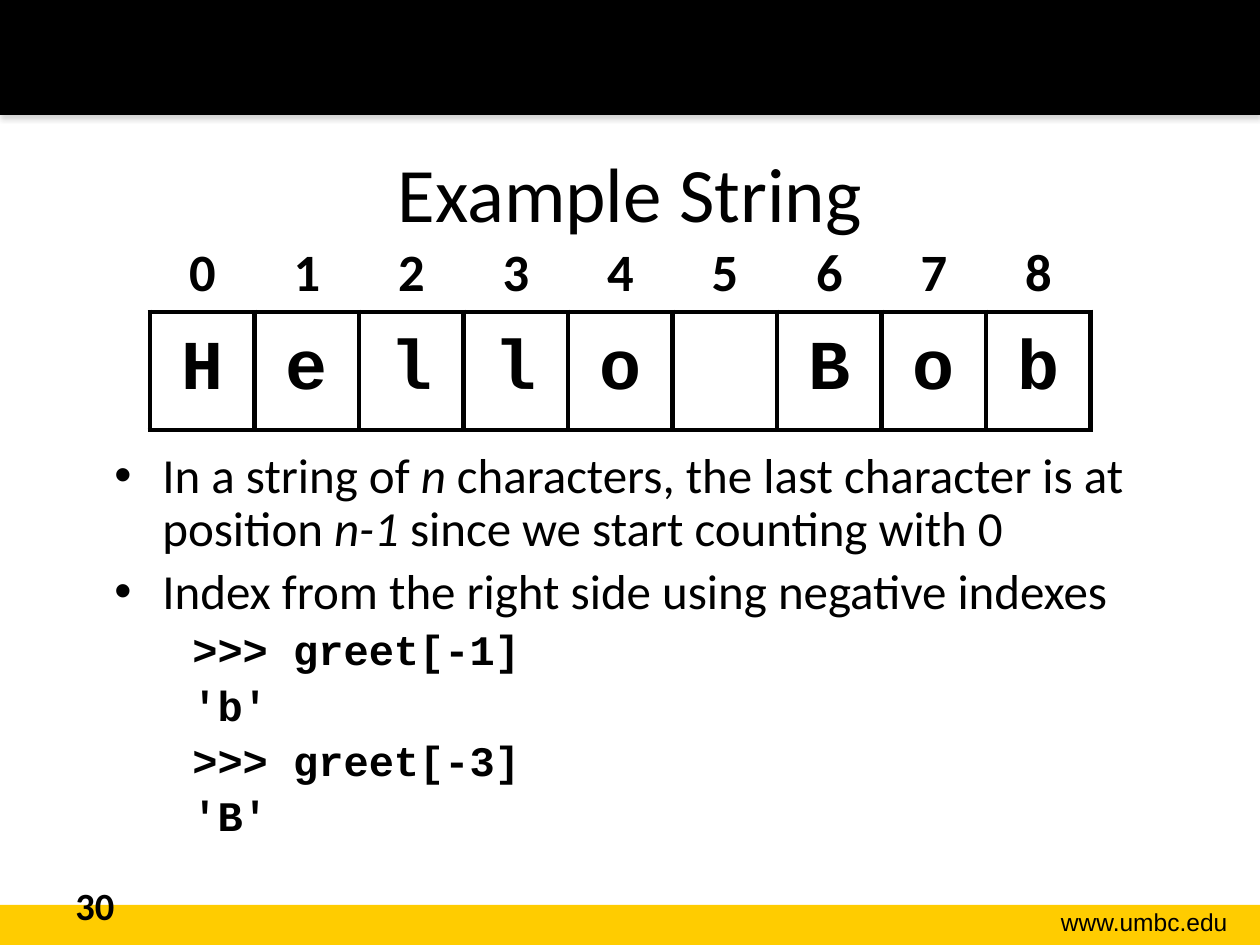
import pptx
import pptx.util
import pptx.dml.color
import pptx.enum.shapes
import pptx.enum.text
import pptx.oxml
import pptx.oxml.ns
from lxml import etree

PX = 914400 // 126
BLACK = pptx.dml.color.RGBColor(0x00, 0x00, 0x00)
WHITE = pptx.dml.color.RGBColor(0xFF, 0xFF, 0xFF)
GOLD = pptx.dml.color.RGBColor(0xFF, 0xCC, 0x00)
ALIGN = pptx.enum.text.PP_ALIGN
ANCHOR = pptx.enum.text.MSO_ANCHOR
qn = pptx.oxml.ns.qn

# Content
TITLE = "Example String"
PAGE_NUMBER = "30"
ADDRESS = "www.umbc.edu"
LETTERS = ["H", "e", "l", "l", "o", "", "B", "o", "b"]
# Odd pieces of a bullet are italic
BULLETS = [
    ["In a string of ", "n", " characters, the last character is at position ",
     "n-1", " since we start counting with 0"],
    ["Index from the right side using negative indexes"],
]
CODE = [">>> greet[-1]", "'b'", ">>> greet[-3]", "'B'"]

BAR_HEIGHT, BANNER_HEIGHT = 40, 115
SLIDE_WIDTH, SLIDE_HEIGHT = 1260, 945
TABLE_LEFT, TABLE_TOP, TABLE_WIDTH = 150, 229, 941
ROW_HEIGHTS = [83, 118]
HANGING = 48


def lengths(*values):
    return [pptx.util.Emu(value * PX) for value in values]


def write(para, text, size, font="Calibri", bold=False, italic=False, align=ALIGN.LEFT):
    para.alignment = align
    span = para.add_run()
    span.text = text
    span.font.size = pptx.util.Pt(size)
    span.font.name = font
    span.font.bold = bold
    span.font.italic = italic
    span.font.color.rgb = BLACK


def add_box(page, place, anchor=ANCHOR.TOP):
    frame = page.shapes.add_textbox(*lengths(*place)).text_frame
    frame.word_wrap = True
    frame.vertical_anchor = anchor
    return frame


def add_bar(page, place, color):
    bar = page.shapes.add_shape(pptx.enum.shapes.MSO_SHAPE.RECTANGLE, *lengths(*place))
    bar.shadow.inherit = False
    bar.fill.solid()
    bar.fill.fore_color.rgb = color
    bar.line.fill.background()
    return bar


def add_shadow(shape):
    effects = shape._element.spPr.find(qn("a:effectLst"))
    shadow = etree.SubElement(effects, qn("a:outerShdw"), blurRad="39370",
                              dist="22860", dir="5400000", rotWithShape="0")
    color = etree.SubElement(shadow, qn("a:srgbClr"), val="808080")
    etree.SubElement(color, qn("a:alpha"), val="35000")


def set_borders(cell, visible):
    properties = cell._tc.get_or_add_tcPr()
    for index, side in enumerate(("L", "R", "T", "B")):
        line = etree.Element(qn("a:ln" + side), w=str(pptx.util.Pt(3)))
        if side in visible:
            fill = etree.SubElement(line, qn("a:solidFill"))
            etree.SubElement(fill, qn("a:srgbClr"), val=str(BLACK))
        else:
            etree.SubElement(line, qn("a:noFill"))
        properties.insert(index, line)


def next_para(frame, number, margin, bullet):
    para = frame.paragraphs[0] if number == 0 else frame.add_paragraph()
    properties = para._p.get_or_add_pPr()
    properties.set("marL", str(margin * PX))
    properties.set("indent", str(-HANGING * PX))
    if bullet:
        etree.SubElement(properties, qn("a:buFont"), typeface="Arial")
        etree.SubElement(properties, qn("a:buChar"), char="•")
    else:
        etree.SubElement(properties, qn("a:buNone"))
    para.line_spacing = 0.9
    para.space_before = pptx.util.Pt(5.6 if number else 0)
    return para


def add_letter_table(page):
    height = sum(ROW_HEIGHTS)
    table = page.shapes.add_table(2, len(LETTERS), *lengths(
        TABLE_LEFT, TABLE_TOP, TABLE_WIDTH, height)).table
    table.first_row = table.horz_banding = False
    for row, row_height in zip(table.rows, lengths(*ROW_HEIGHTS)):
        row.height = row_height
    for number, letter in enumerate(LETTERS):
        table.columns[number].width = pptx.util.Emu(TABLE_WIDTH * PX // len(LETTERS))
        # Index above
        index_cell = table.cell(0, number)
        index_cell.vertical_anchor = ANCHOR.BOTTOM
        index_cell.fill.background()
        set_borders(index_cell, "B")
        write(index_cell.text_frame.paragraphs[0], str(number), 30,
              bold=True, align=ALIGN.CENTER)
        # Character below
        letter_cell = table.cell(1, number)
        letter_cell.vertical_anchor = ANCHOR.MIDDLE
        letter_cell.fill.solid()
        letter_cell.fill.fore_color.rgb = WHITE
        set_borders(letter_cell, "LRTB")
        if letter:
            write(letter_cell.text_frame.paragraphs[0], letter, 40,
                  font="Courier New", bold=True, align=ALIGN.CENTER)


def main():
    deck = pptx.Presentation()
    deck.slide_width, deck.slide_height = lengths(SLIDE_WIDTH, SLIDE_HEIGHT)
    page = deck.slides.add_slide(deck.slide_layouts[6])

    # Footer bar and top banner
    add_bar(page, (0, SLIDE_HEIGHT - BAR_HEIGHT, SLIDE_WIDTH, BAR_HEIGHT), GOLD)
    add_shadow(add_bar(page, (0, 0, SLIDE_WIDTH, BANNER_HEIGHT), BLACK))
    address = add_box(page, (989, 901, 251, 43))
    write(address.paragraphs[0], ADDRESS, 14, font="Arial", align=ALIGN.RIGHT)

    # Title and page number
    title = add_box(page, (63, 113, 1134, 158), ANCHOR.MIDDLE)
    write(title.paragraphs[0], TITLE, 44, align=ALIGN.CENTER)
    number_box = add_box(page, (63, 876, 294, 50))
    write(number_box.paragraphs[0], PAGE_NUMBER, 22, bold=True)

    add_letter_table(page)

    # Bullets and code
    body = add_box(page, (102, 445, 1071, 383))
    for number, pieces in enumerate(BULLETS):
        para = next_para(body, number, HANGING, bullet=True)
        for position, piece in enumerate(pieces):
            write(para, piece, 28, italic=position % 2 == 1)
    for number, line in enumerate(CODE, len(BULLETS)):
        para = next_para(body, number, 126, bullet=False)
        write(para, line, 24, font="Courier New", bold=True)

    deck.save("out.pptx")


if __name__ == "__main__":
    main()
